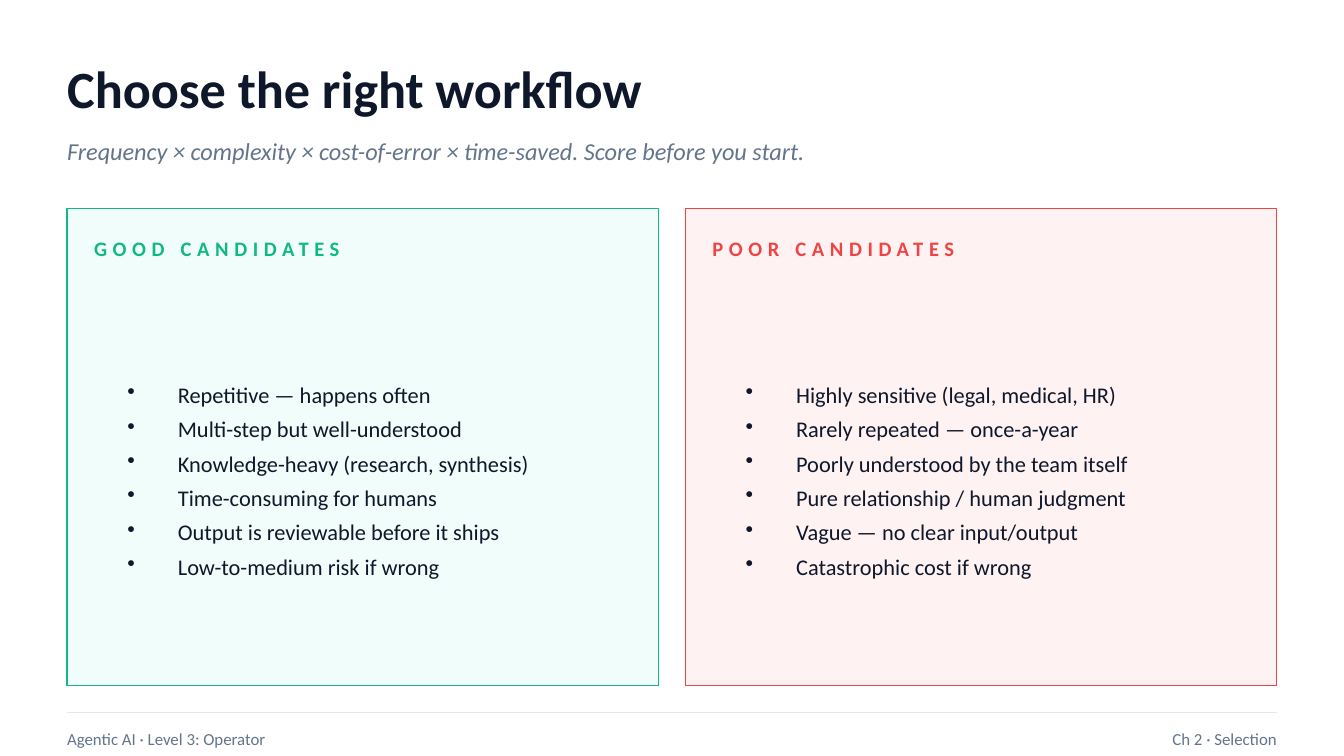
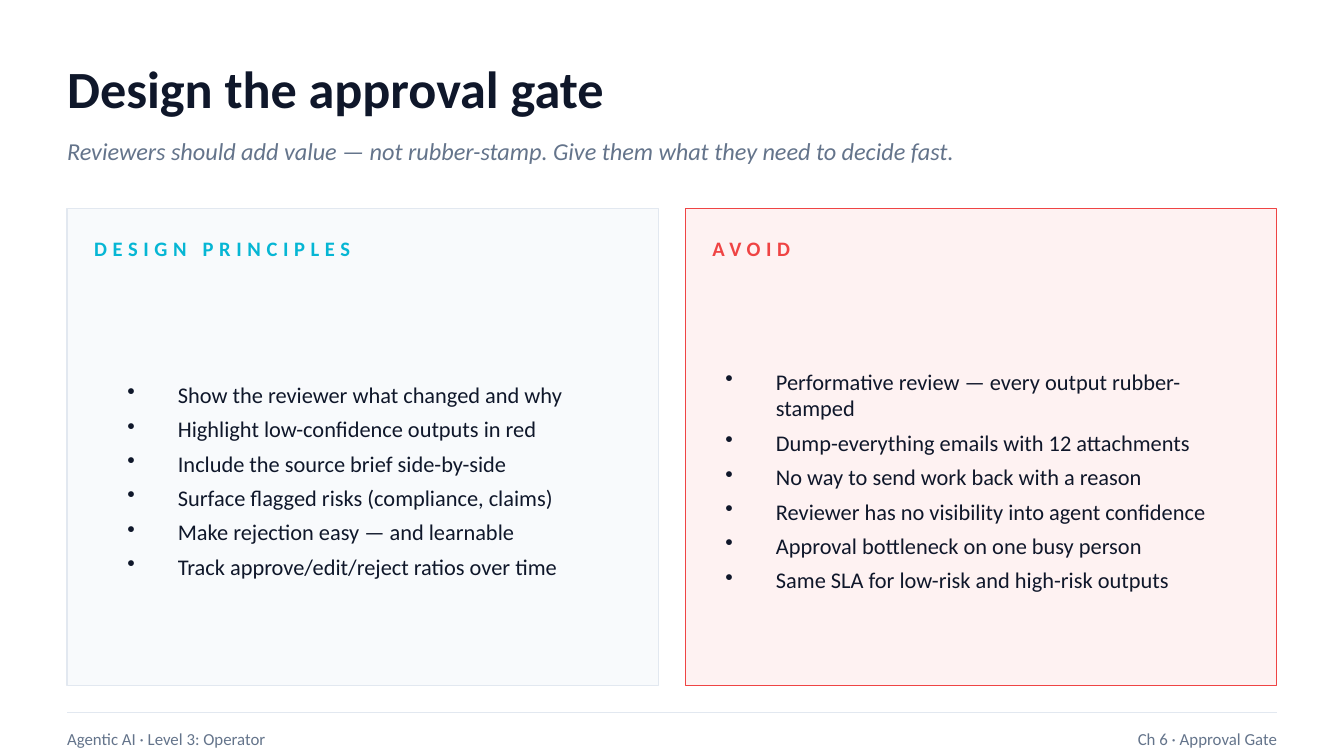
from lxml.etree import SubElement
from pptx import Presentation
from pptx.dml.color import RGBColor
from pptx.enum.shapes import MSO_CONNECTOR as Connector, MSO_SHAPE as Shape
from pptx.enum.text import MSO_ANCHOR as Anchor, PP_ALIGN as Align
from pptx.oxml.ns import qn
from pptx.util import Pt

FONT = "Calibri"
INK = RGBColor(0x0F, 0x17, 0x2A)
SLATE = RGBColor(0x64, 0x74, 0x8B)
RULE = RGBColor(0xE2, 0xE8, 0xF0)
MIST = RGBColor(0xF8, 0xFA, 0xFC)
CYAN = RGBColor(0x06, 0xB6, 0xD4)
GREEN = RGBColor(0x10, 0xB9, 0x81)
MINT = RGBColor(0xF0, 0xFD, 0xFA)
RED = RGBColor(0xEF, 0x44, 0x44)
BLUSH = RGBColor(0xFE, 0xF2, 0xF2)

# Card colours: fill, border, heading
GOOD = (MINT, GREEN, GREEN)
BAD = (BLUSH, RED, RED)
NEUTRAL = (MIST, RULE, CYAN)

COURSE = "Agentic AI · Level 3: Operator"
SLIDES = [
    {
        "title": "Choose the right workflow",
        "subtitle": "Frequency × complexity × cost-of-error × time-saved. Score before you start.",
        "chapter": "Ch 2 · Selection",
        "cards": [
            {"heading": "GOOD CANDIDATES", "colours": GOOD, "indent": 25.2, "points": [
                "Repetitive — happens often",
                "Multi-step but well-understood",
                "Knowledge-heavy (research, synthesis)",
                "Time-consuming for humans",
                "Output is reviewable before it ships",
                "Low-to-medium risk if wrong",
            ]},
            {"heading": "POOR CANDIDATES", "colours": BAD, "indent": 25.2, "points": [
                "Highly sensitive (legal, medical, HR)",
                "Rarely repeated — once-a-year",
                "Poorly understood by the team itself",
                "Pure relationship / human judgment",
                "Vague — no clear input/output",
                "Catastrophic cost if wrong",
            ]},
        ],
    },
    {
        "title": "Design the approval gate",
        "subtitle": "Reviewers should add value — not rubber-stamp. "
                    "Give them what they need to decide fast.",
        "chapter": "Ch 6 · Approval Gate",
        "cards": [
            {"heading": "DESIGN PRINCIPLES", "colours": NEUTRAL, "indent": 25.2, "points": [
                "Show the reviewer what changed and why",
                "Highlight low-confidence outputs in red",
                "Include the source brief side-by-side",
                "Surface flagged risks (compliance, claims)",
                "Make rejection easy — and learnable",
                "Track approve/edit/reject ratios over time",
            ]},
            {"heading": "AVOID", "colours": BAD, "indent": 14.4, "points": [
                "Performative review — every output rubber-stamped",
                "Dump-everything emails with 12 attachments",
                "No way to send work back with a reason",
                "Reviewer has no visibility into agent confidence",
                "Approval bottleneck on one busy person",
                "Same SLA for low-risk and high-risk outputs",
            ]},
        ],
    },
]

WIDTH, HEIGHT, MARGIN = 720, 405, 36
CONTENT = WIDTH - 2 * MARGIN
GAP = 14.4
CARD_TOP, CARD_HEIGHT = 111.6, 255.6
CARD_WIDTH = (CONTENT - GAP) / 2
PAD, RIGHT_PAD = 14.4, 7.2
HANG = 27
FOOTER_RULE, FOOTER_TOP, FOOTER_HEIGHT = 381.6, 385.2, 21.6
COURSE_WIDTH = 360


def add_text(slide, box, lines, size, colour, bold=None, italic=None,
             align=None, inset=0, spacing=0, bulleted=False):
    frame = slide.shapes.add_textbox(*map(Pt, box)).text_frame
    frame.word_wrap = True
    frame.vertical_anchor = Anchor.MIDDLE
    frame.margin_left = frame.margin_right = Pt(inset)
    frame.margin_top = frame.margin_bottom = Pt(inset / 2)
    for i, line in enumerate(lines):
        paragraph = frame.paragraphs[0] if i == 0 else frame.add_paragraph()
        run = paragraph.add_run()
        run.text = line
        if spacing:
            run._r.get_or_add_rPr().set("spc", str(spacing * 100))
        if bulleted:
            add_bullet(paragraph)
        if align is not None:
            paragraph.alignment = align
        font = paragraph.font
        font.name, font.size, font.bold, font.italic = FONT, Pt(size), bold, italic
        font.color.rgb = colour


def add_bullet(paragraph):
    paragraph.space_after = Pt(4)
    properties = paragraph._p.get_or_add_pPr()
    properties.set("marL", str(Pt(HANG)))
    properties.set("indent", str(-Pt(HANG)))
    SubElement(properties, qn("a:buChar")).set("char", "•")


def add_card(slide, left, card):
    fill, border, heading_colour = card["colours"]
    panel = slide.shapes.add_shape(
        Shape.RECTANGLE, Pt(left), Pt(CARD_TOP), Pt(CARD_WIDTH), Pt(CARD_HEIGHT))
    panel.shadow.inherit = False
    panel.fill.solid()
    panel.fill.fore_color.rgb = fill
    panel.line.color.rgb = border
    panel.line.width = Pt(0.75)

    heading_box = (left + PAD, CARD_TOP + 10.8, CARD_WIDTH - PAD - RIGHT_PAD, 21.6)
    add_text(slide, heading_box, [card["heading"]], 11, heading_colour,
             bold=True, spacing=3)
    indent = card["indent"]
    points_box = (left + indent, CARD_TOP + 39.6, CARD_WIDTH - indent - RIGHT_PAD, 212.4)
    add_text(slide, points_box, card["points"], 12, INK, inset=7.2, bulleted=True)


def add_footer(slide, chapter):
    rule = slide.shapes.add_connector(
        Connector.STRAIGHT, Pt(MARGIN), Pt(FOOTER_RULE), Pt(WIDTH - MARGIN), Pt(FOOTER_RULE))
    rule.line.color.rgb = RULE
    rule.line.width = Pt(0.75)
    SubElement(rule._element.spPr, qn("a:effectLst"))
    add_text(slide, (MARGIN, FOOTER_TOP, COURSE_WIDTH, FOOTER_HEIGHT), [COURSE], 9, SLATE)
    add_text(slide, (MARGIN + COURSE_WIDTH, FOOTER_TOP, CONTENT - COURSE_WIDTH, FOOTER_HEIGHT),
             [chapter], 9, SLATE, align=Align.RIGHT)


def main():
    deck = Presentation()
    deck.slide_width, deck.slide_height = Pt(WIDTH), Pt(HEIGHT)
    for content in SLIDES:
        slide = deck.slides.add_slide(deck.slide_layouts[6])
        add_text(slide, (MARGIN, 25.2, CONTENT, 43.2), [content["title"]], 28, INK, bold=True)
        add_text(slide, (MARGIN, 68.4, CONTENT, 25.2), [content["subtitle"]], 13, SLATE,
                 italic=True)
        for column, card in enumerate(content["cards"]):
            add_card(slide, MARGIN + column * (CARD_WIDTH + GAP), card)
        add_footer(slide, content["chapter"])
    deck.save("out.pptx")


if __name__ == "__main__":
    main()
